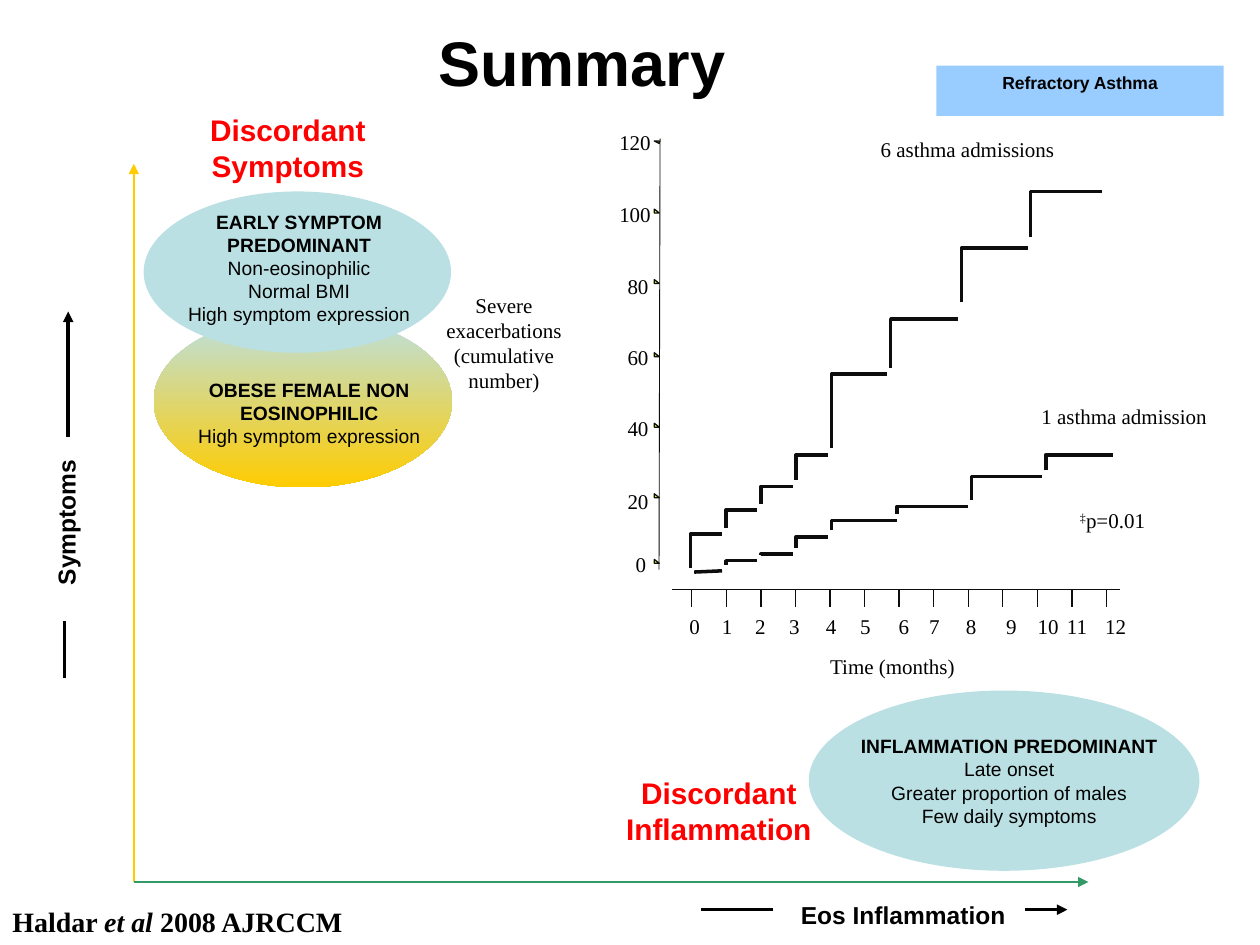
"""Build the asthma phenotype summary slide with its stepped exacerbation plot."""
from lxml import etree
from pptx import Presentation, util as u
from pptx.dml import color
from pptx.enum import shapes, text
from pptx.oxml import ns

Pt = u.Pt
RGB = color.RGBColor.from_string
THEME = {
    "black": RGB("000000"), "ink": RGB("0D0D0D"), "red": RGB("FF0000"),
    "yellow": RGB("FFFF00"), "gold": RGB("FFCC00"), "green": RGB("339966"),
    "teal": RGB("BBE0E3"), "blue": RGB("99CCFF"),
    "title": 36, "heading": 17, "source": 16, "axis": 14, "plot": 12, "body": 11, "tag": 10,
    "sans": "Arial", "serif": "Times New Roman",
}
BOLD, PLAIN = {"bold": True}, {"bold": False}
CENTER = text.PP_ALIGN.CENTER

deck = Presentation()
deck.slide_width, deck.slide_height = Pt(720), Pt(540)
page = deck.slides.add_slide(deck.slide_layouts[6])


def write(paras, area, size, face="sans", ink="black", align=CENTER, wrap=True, inset=(7.2, 3.6)):
    """Add a text box whose paragraphs are lists of (words, format) spans."""
    box = page.shapes.add_textbox(*map(Pt, area))
    across, down = map(Pt, inset)
    frame = {"word_wrap": wrap, "margin_left": across, "margin_right": across,
             "margin_top": down, "margin_bottom": down}
    for name, value in frame.items():
        setattr(box.text_frame, name, value)
    for index, spans in enumerate(paras):
        para = box.text_frame.paragraphs[0] if index == 0 else box.text_frame.add_paragraph()
        para.alignment = align
        for words, style in spans:
            span = para.add_run()
            span.text = words
            for name, value in {"size": Pt(THEME[size]), "name": THEME[face], **style}.items():
                setattr(span.font, name, value)
            span.font.color.rgb = THEME[ink]
    return box


def draw_line(start, end, ink, weight, arrow=False):
    """Add a straight line, with an arrowhead at its end when asked."""
    line = page.shapes.add_connector(shapes.MSO_CONNECTOR.STRAIGHT, *map(Pt, start + end))
    line.line.color.rgb = THEME[ink]
    line.line.width = Pt(weight)
    if arrow:
        etree.SubElement(line.line._get_or_add_ln(), ns.qn("a:tailEnd"), type="triangle")
    etree.SubElement(line._element.spPr, ns.qn("a:effectLst"))


title = write([[("Summary", BOLD)]], (224, 5.8, 216.7, 58.3), "title")
title.text_frame.vertical_anchor = text.MSO_ANCHOR.MIDDLE

phenotypes = [
    ((462.2, 394.6, 223.2, 103), (473.8, 416.2, 205.9, 61.9), False, "INFLAMMATION PREDOMINANT",
     ["Late onset", "Greater proportion of males", "Few daily symptoms"]),
    ((87.8, 180, 170.6, 98.6), (93.6, 212.4, 166.3, 48.2), True, "OBESE FEMALE NON EOSINOPHILIC",
     ["High symptom expression"]),
    ((82.1, 109.4, 175.7, 92.2), (87.8, 116.6, 166.3, 75.6), False, "EARLY SYMPTOM PREDOMINANT",
     ["Non-eosinophilic", "Normal BMI", "High symptom expression"]),
]
for area, text_area, graded, heading, features in phenotypes:
    oval = page.shapes.add_shape(shapes.MSO_SHAPE.OVAL, *map(Pt, area))
    oval.shadow.inherit = False
    oval.line.fill.background()
    if graded:
        oval.fill.gradient()
        oval.fill.gradient_angle = 270
        for stop, position, shade in zip(oval.fill.gradient_stops, (0, 1), ("teal", "gold")):
            stop.position = position
            stop.color.rgb = THEME[shade]
    else:
        oval.fill.solid()
        oval.fill.fore_color.rgb = THEME["teal"]
    write([[(heading, BOLD)]] + [[(feature, PLAIN)] for feature in features], text_area, "body")

for words, left, top in [("Discordant Inflammation", 340.6, 439.2), ("Discordant Symptoms", 94.3, 60.5)]:
    write([[(words, BOLD)]], (left, top, 140.4, 48.2), "heading", ink="red")

for start, end, ink, weight, arrow in [
    ((76.5, 504), (76.5, 93.6), "gold", 1.25, True),
    ((76.5, 504), (622, 504), "green", 1.25, True),
    ((586, 519.8), (610, 519.8), "black", 2, True),
    ((400.5, 519.8), (442, 519.8), "black", 2, False),
    ((39, 250), (39, 178), "black", 2, True),
    ((36.8, 355), (36.8, 387.5), "black", 2, False),
    ((376.6, 325.5), (377.2, 79.2), "ink", 0.5, False),
    ((384, 337), (640, 337), "ink", 0.75, False),
    ((412.6, 326.2), (396.7, 326.9), "ink", 2, False),
]:
    draw_line(start, end, ink, weight, arrow)

write([[("Eos Inflammation", BOLD)]], (426.2, 510.5, 180, 29.5), "axis")
write([[("Symptoms", BOLD)]], (-5, 283.7, 90.7, 29.5), "axis").rotation = 270
citation = [("Haldar ", BOLD), ("et al ", {"bold": True, "italic": True}), ("2008 AJRCCM", BOLD)]
write([citation], (0, 513.4, 209.5, 26.6), "source", "serif", align=text.PP_ALIGN.LEFT, wrap=False)

tag_area = (535, 37.5, 164.2, 28.8)
tag = page.shapes.add_shape(shapes.MSO_SHAPE.RECTANGLE, *map(Pt, tag_area))
tag.shadow.inherit = False
tag.fill.solid()
tag.fill.fore_color.rgb = THEME["blue"]
tag.line.fill.background()
write([[("Refractory Asthma", BOLD)]], tag_area, "tag")

steps = [
    (394.6, 324.7, 305.3, 412.6), (414.7, 301.7, 291.6, 432.7), (434.9, 288, 277.9, 452.9),
    (455, 274.3, 259.9, 473), (475.2, 256.3, 213.8, 506.9), (509, 210.2, 182.2, 547.2),
    (549.4, 172.8, 141.8, 587.5), (589, 135.4, 109.4, 630),
    (414.7, 322.6, 320.4, 432.7), (434.9, 317, 316.6, 452.9), (455, 313.2, 306.7, 473),
    (475.2, 303.1, 297.4, 512.6), (512.6, 293.8, 289.4, 553), (555.1, 285.8, 272.2, 595.4),
    (597.6, 268.6, 259.9, 635.8),
]
tick_tops = [319.7, 282.2, 241.9, 201.6, 159.8, 119.5]
outlines = [([(left, low), (left, high), (right, high)], False, 2) for left, low, high, right in steps]
outlines += [([(376.7, top + 2.2), (373.9, top), (373.9, top + 2.2)], True, 0.75) for top in tick_tops]
outlines.append(([(373.9, 80.6), (376.7, 80.6), (376.7, 82)], True, 0.75))
for points, closed, weight in outlines:
    corners = [(Pt(x), Pt(y)) for x, y in points]
    builder = page.shapes.build_freeform(*corners[0])
    builder.add_line_segments(corners[1:], close=closed)
    outline = builder.convert_to_shape()
    outline.shadow.inherit = False
    outline.line.color.rgb = THEME["ink"]
    outline.line.width = Pt(weight)
    if closed:
        outline.fill.solid()
        outline.fill.fore_color.rgb = THEME["yellow"]
    else:
        outline.fill.background()

for index, top in enumerate([315.4, 279.4, 237.6, 196.6, 156.2, 115.2, 74.2]):
    count = str(20 * index)
    center = 368 - 1.7 * len(count)
    write([[(count, {})]], (center - 12.5, top, 25, 15.8), "plot", "serif", wrap=False, inset=(0, 0))

month_centers = [397, 415.5, 434.5, 454, 475, 494.5, 516.5, 534, 555, 578, 599, 615.5, 637.5]
for month, center in enumerate(month_centers):
    tick = 395.3 + 19.75 * month
    draw_line((tick, 337), (tick, 347), "ink", 0.75)
    write([[(str(month), {})]], (center - 8, 347, 16, 23), "plot", "serif", wrap=False, inset=(0, 3.6))

for words, area in [
    ("Severe exacerbations (cumulative number)", (236.5, 163.4, 103, 67)),
    ("Time (months)", (454, 370, 112, 23)),
    ("1 asthma admission", (565.2, 226.8, 108 * 1.43, 23)),
    ("6 asthma admissions", (472.3, 74.2, 161.3, 23)),
]:
    left, top, width, height = area
    write([[(words, {})]], area, "plot", "serif")

p_value = write([[("‡", {}), ("p=0.01", {})]], (597.6, 286.6, 76.3, 23), "plot", "serif")
p_value.text_frame.paragraphs[0].runs[0].font._element.set("baseline", "30000")

deck.save("out.pptx")
